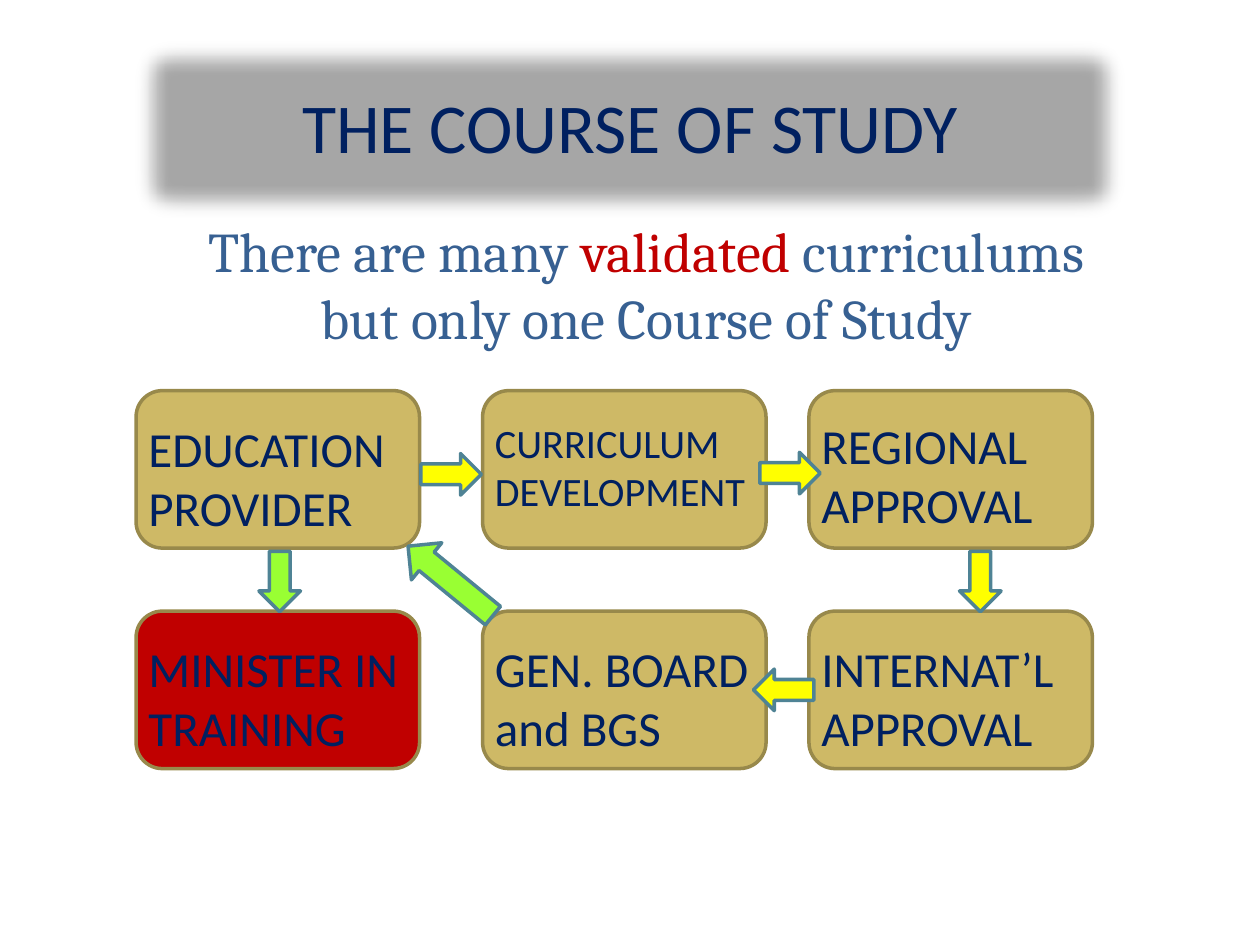
from dataclasses import dataclass

from lxml.etree import SubElement
from pptx import Presentation
from pptx.dml.color import RGBColor
from pptx.enum.shapes import MSO_SHAPE as Shape
from pptx.enum.text import MSO_ANCHOR as Anchor, PP_ALIGN as Align
from pptx.oxml.ns import qn
from pptx.util import Inches, Pt

NAVY, BLUE, RED = "002060", "376092", "C00000"
GOLD, GOLD_EDGE, ARROW_EDGE = "CEB966", "98894B", "4F8395"
YELLOW, GREEN = "FFFF00", "99FF33"

COLUMNS = (1.08, 3.83, 6.42)
ROWS = (3.1, 4.85)
STEP_WIDTH, STEP_HEIGHT = 2.25, 1.25


@dataclass
class Step:
    column: int
    row: int
    lines: tuple[str, str]
    fill: str = GOLD
    size: int = 28
    drop: float = 0.17


@dataclass
class Arrow:
    left: float
    top: float
    fill: str = YELLOW
    turn: float = 0
    width: float = 0.48
    height: float = 0.33


STEPS = (
    Step(0, 0, ("EDUCATION", "PROVIDER")),
    Step(1, 0, ("CURRICULUM", "DEVELOPMENT"), size=23),
    Step(2, 0, ("REGIONAL", "APPROVAL"), drop=0.15),
    Step(2, 1, ("INTERNAT’L", "APPROVAL")),
    Step(1, 1, ("GEN. BOARD", "and BGS")),
    Step(0, 1, ("MINISTER IN", "TRAINING"), fill=RED),
)

ARROWS = (
    Arrow(3.34, 3.6),
    Arrow(6.03, 3.59),
    Arrow(7.54, 4.45, turn=90),
    Arrow(1.98, 4.45, GREEN, 90),
    Arrow(5.98, 5.31, turn=180),
    Arrow(3.14, 4.42, GREEN, 219.3, 0.87, 0.38),
)


def color(value: str) -> RGBColor:
    return RGBColor.from_string(value)


def add_filled(page, kind, at: tuple, fill: str, edge: str | None = None):
    shape = page.shapes.add_shape(kind, *map(Inches, at))
    shape.shadow.inherit = False
    shape.fill.solid()
    shape.fill.fore_color.rgb = color(fill)
    if edge:
        shape.line.color.rgb = color(edge)
        shape.line.width = Pt(2)
    else:
        shape.line.fill.background()
    return shape


def write(frame, lines: tuple, size: int, font: str, align) -> None:
    """Write one paragraph per line; a line is a tuple of (text, colour) spans."""
    frame.word_wrap = True
    style = {"name": font, "size": Pt(size)}
    for index, line in enumerate(lines):
        para = frame.add_paragraph() if index else frame.paragraphs[0]
        para.alignment = align
        for text, shade in line:
            span = para.add_run()
            span.text = text
            for key, value in style.items():
                setattr(span.font, key, value)
            span.font.color.rgb = color(shade)


def add_title(page) -> None:
    banner = add_filled(page, Shape.RECTANGLE, (1, 0.25, 8, 1.55), "000000")
    # Translucent fill and soft edge
    properties = banner.element.spPr
    shade = properties.find(qn("a:solidFill")).find(qn("a:srgbClr"))
    SubElement(shade, qn("a:alpha"), val="35000")
    effects = properties.find(qn("a:effectLst"))
    SubElement(effects, qn("a:softEdge"), rad=str(Pt(12.5)))
    frame = banner.text_frame
    frame.vertical_anchor = Anchor.MIDDLE
    frame.margin_bottom = Inches(0.11)
    write(frame, ((("THE COURSE OF STUDY", NAVY),),), 40, "Calibri", Align.CENTER)


def add_subtitle(page) -> None:
    box = page.shapes.add_textbox(*map(Inches, (0.67, 1.67, 8.92, 1.18)))
    lines = (
        (("There are many ", BLUE), ("validated", RED), (" curriculums", BLUE)),
        (("but only one Course of Study", BLUE),),
    )
    write(box.text_frame, lines, 32, "Cambria", Align.CENTER)


def add_step(page, step: Step) -> None:
    left, top = COLUMNS[step.column], ROWS[step.row]
    add_filled(page, Shape.ROUNDED_RECTANGLE,
               (left, top, STEP_WIDTH, STEP_HEIGHT), step.fill, GOLD_EDGE)
    box = page.shapes.add_textbox(
        *map(Inches, (left, top + step.drop, STEP_WIDTH, 1.04)))
    lines = tuple(((text, NAVY),) for text in step.lines)
    write(box.text_frame, lines, step.size, "Calibri", Align.LEFT)


def add_arrow(page, arrow: Arrow) -> None:
    at = (arrow.left, arrow.top, arrow.width, arrow.height)
    shape = add_filled(page, Shape.RIGHT_ARROW, at, arrow.fill, ARROW_EDGE)
    shape.rotation = arrow.turn


def main() -> None:
    deck = Presentation()
    deck.slide_width, deck.slide_height = Inches(10), Inches(7.5)
    page = deck.slides.add_slide(deck.slide_layouts[6])

    # Heading
    add_title(page)
    add_subtitle(page)

    # Approval cycle
    for step in STEPS:
        add_step(page, step)
    for arrow in ARROWS:
        add_arrow(page, arrow)

    deck.save("out.pptx")


if __name__ == "__main__":
    main()
